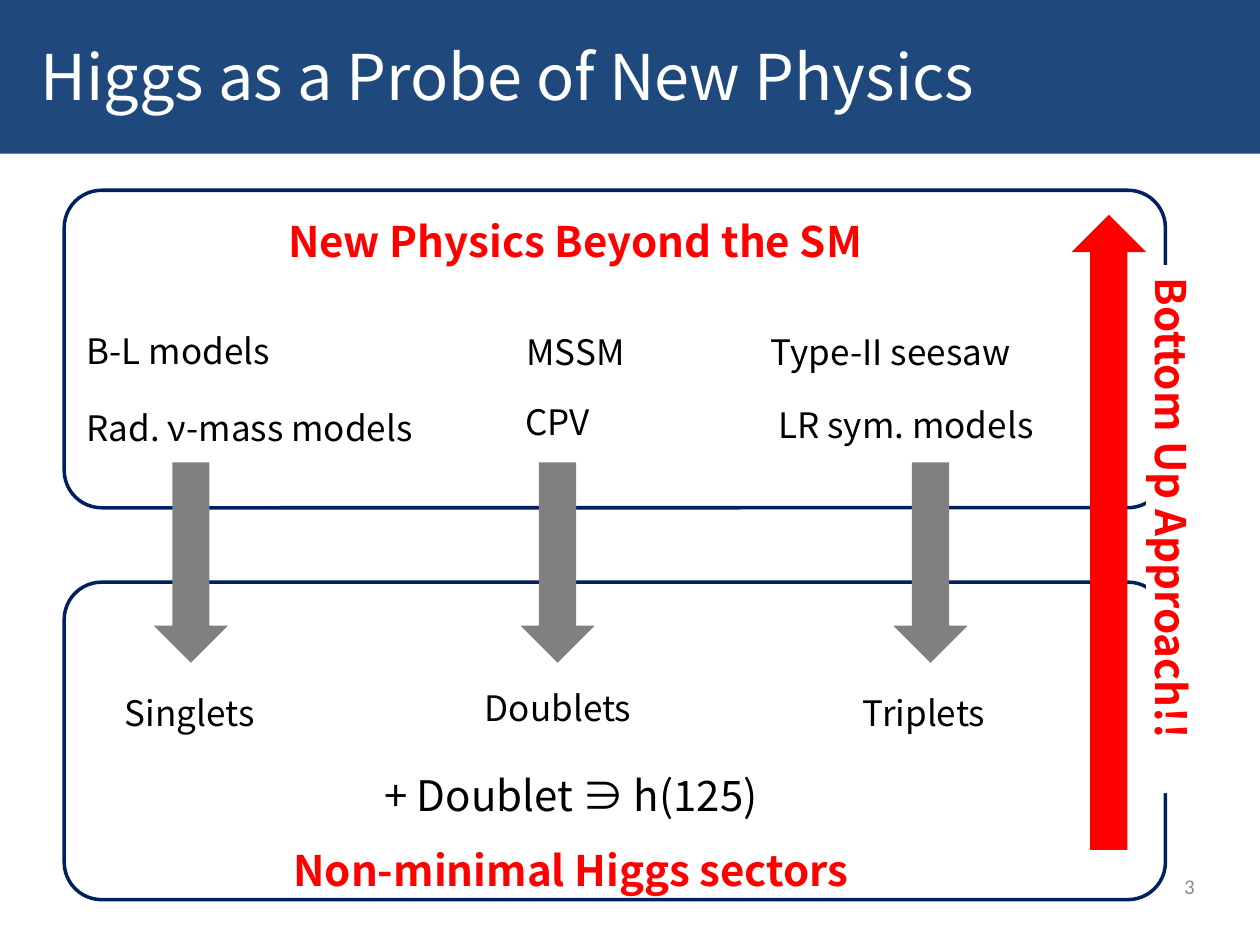
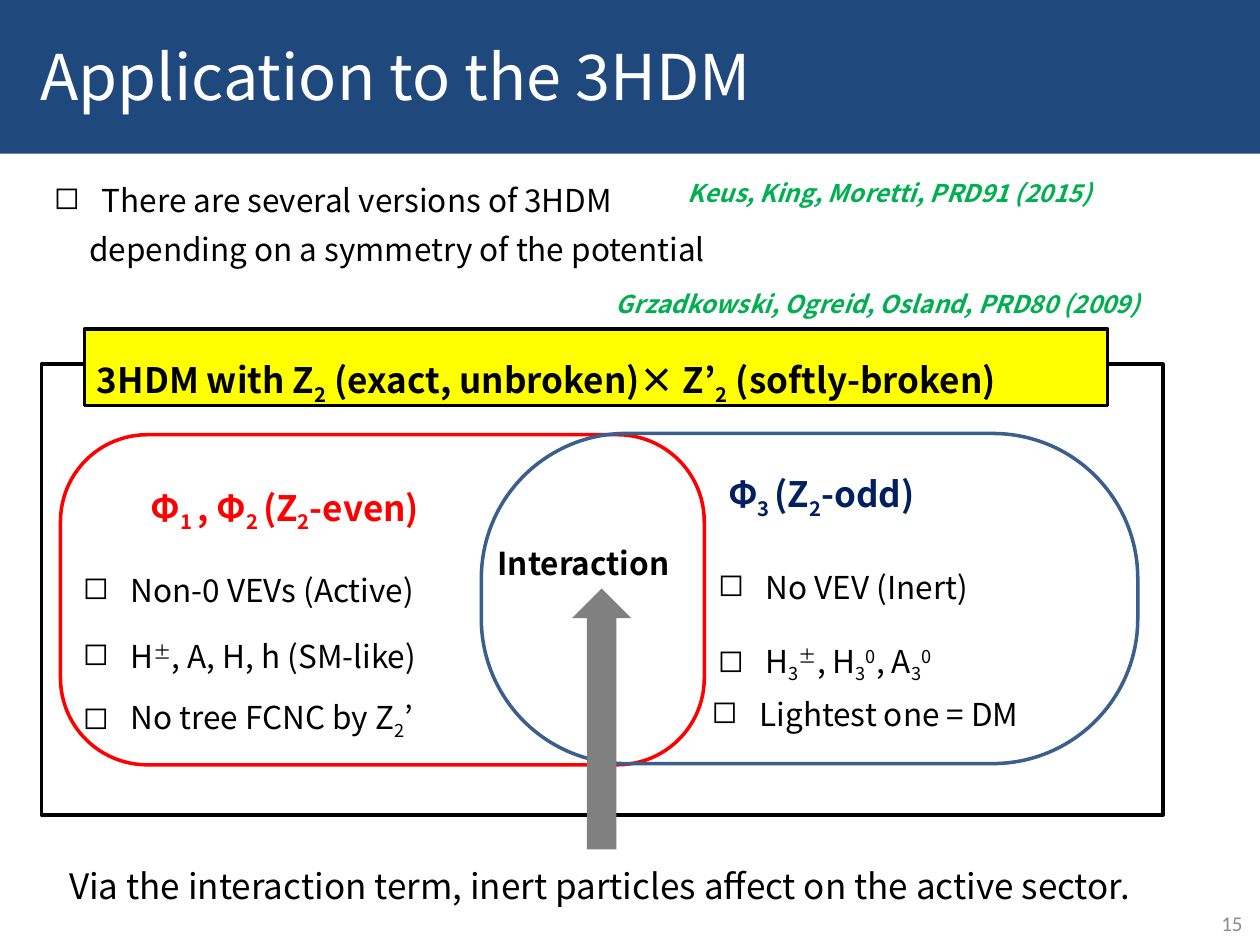
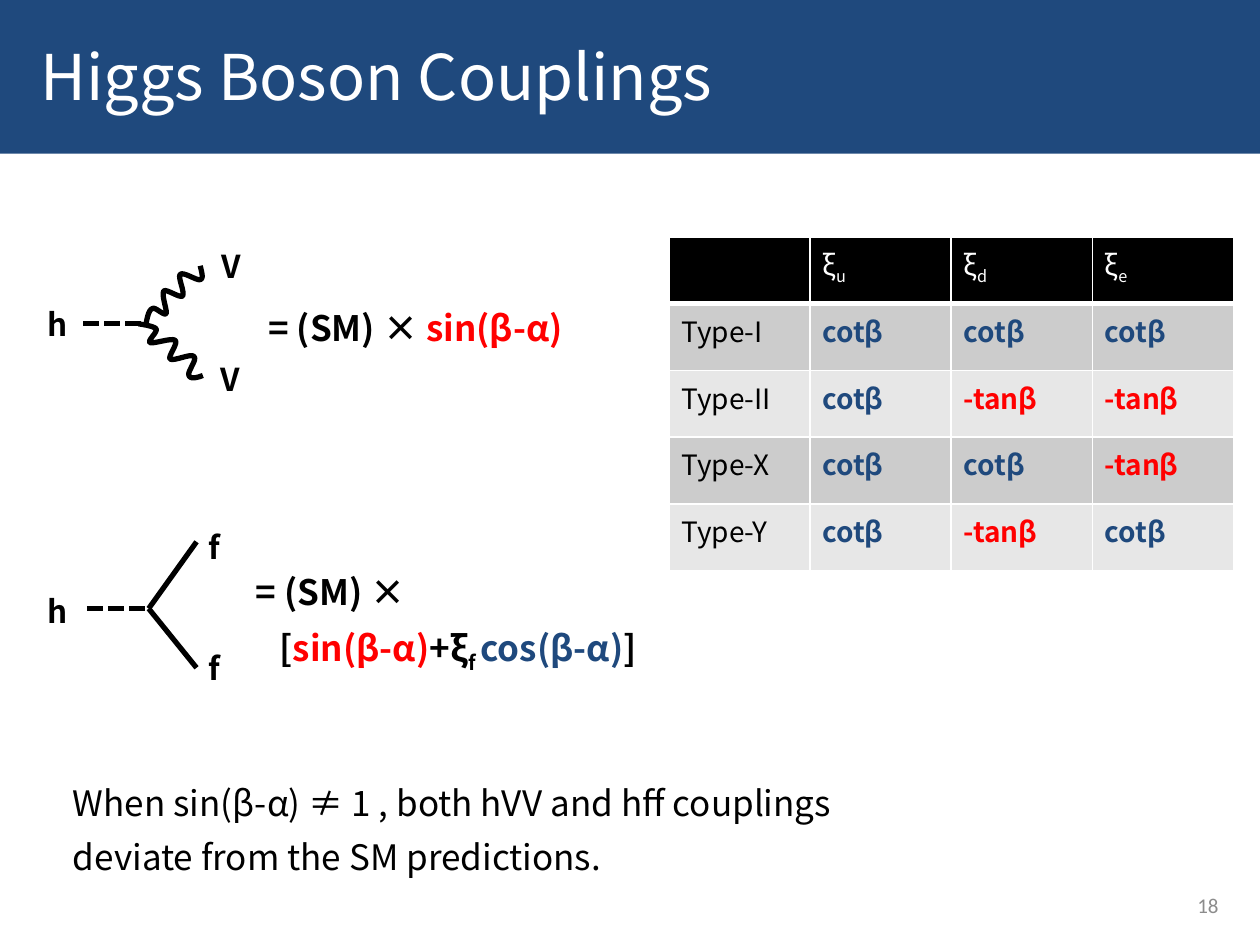
from lxml import etree
from pptx import Presentation
from pptx import util as u
from pptx.dml.color import RGBColor
from pptx.enum import dml, shapes, text
from pptx.oxml.ns import qn

FONT = "Noto Sans CJK JP"
BLACK, WHITE, RED, GREEN = "000000", "FFFFFF", "FF0000", "00B050"
BLUE, NAVY, STEEL, GRAY, YELLOW = "1F497D", "002060", "3A5F8C", "808080", "FFFF00"
SHAPE = shapes.MSO_SHAPE


def rgb(value):
    return RGBColor.from_string(value)


def sub(content):
    return content, {"baseline": -25}


def sup(content):
    return content, {"baseline": 30}


def colored(content, color):
    return content, {"color": color}


class Deck:
    def __init__(self):
        self.presentation = Presentation()
        self.presentation.slide_width = u.Inches(10)
        self.presentation.slide_height = u.Inches(7.5)
        self.slide = None

    def new_slide(self, title, number, number_left, number_top):
        """Start a slide with its title band and page number."""
        self.slide = self.presentation.slides.add_slide(self.presentation.slide_layouts[6])
        band = self.shape(SHAPE.RECTANGLE, 0, -0.03, 10, 1.25, fill=BLUE)
        self.set_text(band, [title], size=36, color=WHITE, anchor="MIDDLE")
        band.text_frame.margin_left = u.Inches(0.32)
        box = self.slide.shapes.add_textbox(
            *map(u.Inches, (number_left, number_top, 2.33, 0.4)))
        self.set_text(box, [number], size=12, color="8C8C8C", font="Calibri",
                      anchor="MIDDLE", align="RIGHT")

    # Text
    def add_run(self, paragraph, content, size, color, bold=False, italic=False,
                font=FONT, baseline=0):
        run = paragraph.add_run()
        run.text = content
        run.font.size = u.Pt(size)
        run.font.bold, run.font.italic = bold, italic
        run.font.color.rgb = rgb(color)
        run.font.name = font
        properties = run._r.get_or_add_rPr()
        etree.SubElement(properties, qn("a:ea"), typeface=font)
        if baseline:
            properties.set("baseline", str(baseline * 1000))

    def add_runs(self, paragraph, runs, **style):
        for run in runs:
            content, changes = run if isinstance(run, tuple) else (run, {})
            self.add_run(paragraph, content, **{**style, **changes})

    def set_text(self, shape, *lines, spacing=1, anchor="TOP", align="LEFT",
                 bullet=False, indent=0, wrap=True, grow=False, **style):
        """Fill a shape with lines of runs; indent applies after the first line."""
        frame = shape.text_frame
        frame.word_wrap = wrap
        frame.vertical_anchor = text.MSO_ANCHOR[anchor]
        if grow:
            frame.auto_size = text.MSO_AUTO_SIZE.SHAPE_TO_FIT_TEXT
        for index, runs in enumerate(lines):
            paragraph = frame.add_paragraph() if index else frame.paragraphs[0]
            paragraph.alignment = text.PP_ALIGN[align]
            paragraph.line_spacing = spacing
            properties = paragraph._p.get_or_add_pPr()
            if bullet and index == 0:
                properties.set("marL", str(u.Inches(0.38)))
                properties.set("indent", str(u.Inches(-0.38)))
                etree.SubElement(properties, qn("a:buChar"), char="◻")
            elif index and indent:
                properties.set("marL", str(u.Inches(indent)))
            self.add_runs(paragraph, runs, **style)

    def label(self, left, top, width, height, *lines, size=20, color=BLACK,
              spacing=1.5, wrap=False, **options):
        box = self.slide.shapes.add_textbox(*map(u.Inches, (left, top, width, height)))
        self.set_text(box, *lines, size=size, color=color, spacing=spacing, wrap=wrap,
                      grow=True, **options)

    def item(self, left, top, width, *lines, height=0.49, **options):
        self.label(left, top, width, height, *lines, size=18, spacing=1.3,
                   wrap=True, bullet=True, **options)

    # Shapes and lines
    def shape(self, kind, left, top, width, height, fill=None, line=None,
              rotation=0, corner=None):
        shape = self.slide.shapes.add_shape(kind, *map(u.Inches, (left, top, width, height)))
        self.paint(shape, fill, line, 2)
        shape.rotation = rotation
        if corner is not None:
            shape.adjustments[0] = corner
        return shape

    def paint(self, shape, fill, line, width):
        shape.shadow.inherit = False
        if fill:
            shape.fill.solid()
            shape.fill.fore_color.rgb = rgb(fill)
        else:
            shape.fill.background()
        if line:
            shape.line.color.rgb = rgb(line)
            shape.line.width = u.Pt(width)
        else:
            shape.line.fill.background()

    def line(self, start, end, dashed=False):
        connector = self.slide.shapes.add_connector(
            shapes.MSO_CONNECTOR.STRAIGHT, *map(u.Inches, (*start, *end)))
        connector.line.color.rgb = rgb(BLACK)
        connector.line.width = u.Pt(3)
        if dashed:
            connector.line.dash_style = dml.MSO_LINE.SQUARE_DOT
        etree.SubElement(connector._element.spPr, qn("a:effectLst"))

    def curve(self, start, segments, steps=8):
        """Trace cubic segments, each given as two controls and an end point."""
        points, origin = [], start
        for x1, y1, x2, y2, x3, y3 in segments:
            for step in range(1, steps + 1):
                t = step / steps
                weights = (1 - t) ** 3, 3 * t * (1 - t) ** 2, 3 * t * t * (1 - t), t ** 3
                points.append(tuple(
                    u.Inches(sum(w * c for w, c in zip(weights, axis)))
                    for axis in ((origin[0], x1, x2, x3), (origin[1], y1, y2, y3))))
            origin = x3, y3
        builder = self.slide.shapes.build_freeform(*map(u.Inches, start))
        builder.add_line_segments(points, close=False)
        self.paint(builder.convert_to_shape(), None, BLACK, 3)

    # Table
    def cell(self, cell, runs, fill, bottom=1, **style):
        properties = cell._tc.get_or_add_tcPr()
        for side, width in (("L", 1), ("R", 1), ("T", 1), ("B", bottom)):
            border = etree.SubElement(properties, qn(f"a:ln{side}"), w=str(u.Pt(width)))
            solid = etree.SubElement(border, qn("a:solidFill"))
            etree.SubElement(solid, qn("a:srgbClr"), val=WHITE)
        cell.fill.solid()
        cell.fill.fore_color.rgb = rgb(fill)
        self.add_runs(cell.text_frame.paragraphs[0], runs, size=16, **style)


def new_physics_slide(deck):
    deck.new_slide("Higgs as a Probe of New Physics", "3", 7.25, 6.83)
    for top in (1.51, 4.62):
        deck.shape(SHAPE.ROUNDED_RECTANGLE, 0.51, top, 8.74, 2.52, line=NAVY, corner=0.118)
    for left in (0.72, 3.63, 6.59):
        deck.shape(SHAPE.RIGHT_ARROW, left, 4.17, 1.59, 0.59, fill=GRAY, rotation=90)

    # Models above, multiplets below
    for left, top, width, height, name in (
            (0.59, 2.4, 1.74, 0.61, "B-L models"),
            (0.59, 3.01, 2.99, 0.56, "Rad. ν-mass models"),
            (4.08, 2.41, 1.02, 0.56, "MSSM"),
            (4.07, 2.96, 0.75, 0.56, "CPV"),
            (6.02, 2.41, 2.29, 0.56, "Type-II seesaw"),
            (6.08, 2.99, 2.39, 0.56, "LR sym. models"),
            (0.89, 5.27, 1.28, 0.61, "Singlets"),
            (3.75, 5.23, 1.4, 0.61, "Doublets"),
            (6.75, 5.27, 1.19, 0.61, "Triplets")):
        deck.label(left, top, width, height, [name])
    heading = dict(size=24, color=RED, bold=True)
    deck.label(2.19, 1.46, 5.2, 0.66, ["New Physics Beyond the SM"], **heading)
    deck.label(2.23, 6.45, 5.04, 0.71, ["Non-minimal Higgs sectors"], **heading)
    deck.label(2.95, 5.86, 3.49, 0.71, ["+ Doublet ∋ h(125)"], size=24)

    # Bottom-up arrow
    deck.shape(SHAPE.RIGHT_ARROW, 6.28, 3.93, 5.04, 0.59, fill=RED, rotation=270)
    banner = deck.shape(SHAPE.RECTANGLE, 7.33, 3.87, 4.19, 0.66, fill=WHITE, rotation=90)
    deck.set_text(banner, ["Bottom Up Approach!!"], spacing=1.5, wrap=False, grow=True,
                  **heading)


def application_slide(deck):
    deck.new_slide("Application to the 3HDM", "15", 7.63, 7.13)
    deck.item(0.33, 1.3, 10.08, ["There are several versions of 3HDM"],
              ["depending on a symmetry of the potential"], height=0.89, indent=0.28)

    # Even and odd sectors
    deck.shape(SHAPE.ROUNDED_RECTANGLE, 0.48, 3.45, 5.11, 2.62, line=RED, corner=0.263)
    deck.shape(SHAPE.ROUNDED_RECTANGLE, 3.82, 3.44, 5.21, 2.62, line=STEEL, corner=0.439)
    deck.label(1.1, 3.62, 2.84, 0.56,
               ["Φ", sub("1 "), ", Φ", sub("2 "), "(Z", sub("2"), "-even)"],
               color=RED, bold=True)
    deck.label(5.68, 3.51, 1.92, 0.56, ["Φ", sub("3 "), "(Z", sub("2"), "-odd)"],
               color=NAVY, bold=True)
    for left, top, width, runs in (
            (0.56, 4.39, 3.25, ["Non-0 VEVs (Active)"]),
            (0.56, 4.92, 3.39, ["H", sup("±"), ", A, H, h (SM-like)"]),
            (0.56, 5.39, 3.39, ["No tree FCNC by Z", sub("2"), "’"]),
            (5.6, 4.37, 2.52, ["No VEV (Inert)"]),
            (5.6, 4.94, 2.73, ["H", sub("3"), sup("±"), ", H", sub("3"), sup("0"),
                               ", A", sub("3"), sup("0")]),
            (5.55, 5.38, 3.03, ["Lightest one = DM"])):
        deck.item(left, top, width, runs)

    # Frame with its heading, and the interaction arrow
    deck.shape(SHAPE.RECTANGLE, 0.33, 2.89, 8.9, 3.58, line=BLACK)
    heading = deck.shape(SHAPE.RECTANGLE, 0.67, 2.61, 8.12, 0.61, fill=YELLOW, line=BLACK)
    deck.set_text(heading, ["3HDM with Z", sub("2"), " (exact, unbroken)× Z’", sub("2"),
                            " (softly-broken)"],
                  size=20, color=BLACK, bold=True, spacing=1.5, wrap=False, grow=True)
    deck.shape(SHAPE.DOWN_ARROW, 4.54, 4.67, 0.47, 2.07, fill=GRAY, rotation=180)
    deck.label(3.85, 4.18, 1.79, 0.49, ["Interaction"], size=18, spacing=1.3,
               wrap=True, bold=True)

    # References and conclusion
    for left, top, width, reference in (
            (5.36, 1.25, 3.87, "Keus, King, Moretti, PRD91 (2015)"),
            (4.79, 2.13, 4.97, "Grzadkowski, Ogreid, Osland, PRD80 (2009)")):
        deck.label(left, top, width, 0.45, [reference], size=14, color=GREEN,
                   wrap=True, bold=True, italic=True)
    deck.label(0.45, 6.71, 9.11, 0.54,
               ["Via the interaction term, inert particles affect on the active sector."],
               spacing=1.3, wrap=True)


def couplings_slide(deck):
    deck.new_slide("Higgs Boson Couplings", "18", 7.44, 6.98)

    # Coupling factors by type
    table = deck.slide.shapes.add_table(
        5, 4, *map(u.Inches, (5.31, 1.88, 4.49, 2.66))).table
    for column in table.columns:
        column.width = u.Inches(1.12)
    for row in table.rows:
        row.height = u.Inches(0.53)
    for column, fermion in enumerate(("", "u", "d", "e")):
        deck.cell(table.cell(0, column), ["ξ", sub(fermion)] if fermion else [],
                  BLACK, bottom=3, color=WHITE)
    cot, tan = "cotβ", "-tanβ"
    factors = {"Type-I": (cot, cot, cot), "Type-II": (cot, tan, tan),
               "Type-X": (cot, cot, tan), "Type-Y": (cot, tan, cot)}
    for row, (name, values) in enumerate(factors.items(), 1):
        fill = "CCCCCC" if row % 2 else "E7E7E7"
        deck.cell(table.cell(row, 0), [name], fill, color=BLACK)
        for column, value in enumerate(values, 1):
            deck.cell(table.cell(row, column), [value], fill, bold=True,
                      color=BLUE if value == cot else RED)

    # Vertex with two vector bosons
    deck.line((0.66, 2.57), (1.16, 2.57), dashed=True)
    deck.curve((1.16, 2.57), [
        (1.17, 2.52, 1.18, 2.46, 1.21, 2.45), (1.23, 2.43, 1.3, 2.51, 1.32, 2.49),
        (1.33, 2.47, 1.28, 2.34, 1.3, 2.31), (1.32, 2.29, 1.43, 2.37, 1.45, 2.35),
        (1.47, 2.32, 1.41, 2.2, 1.43, 2.18), (1.45, 2.15, 1.56, 2.23, 1.59, 2.22),
        (1.62, 2.21, 1.6, 2.16, 1.59, 2.11)])
    deck.curve((1.1, 2.57), [
        (1.16, 2.58, 1.22, 2.59, 1.24, 2.61), (1.25, 2.64, 1.17, 2.7, 1.19, 2.72),
        (1.22, 2.73, 1.36, 2.68, 1.39, 2.7), (1.42, 2.72, 1.33, 2.83, 1.35, 2.85),
        (1.38, 2.87, 1.52, 2.8, 1.54, 2.83), (1.57, 2.85, 1.48, 2.96, 1.5, 2.98),
        (1.51, 3.01, 1.56, 3, 1.61, 2.98)])
    deck.label(2.03, 2.38, 2.88, 0.44, ["= (SM) × ", colored("sin(β-α)", RED)],
               spacing=1, bold=True)

    # Vertex with two fermions
    deck.line((0.69, 4.83), (1.17, 4.83), dashed=True)
    for end_y in (4.3, 5.3):
        deck.line((1.18, 4.83), (1.56, end_y))
    deck.label(1.93, 4.38, 3.8, 0.98, ["= (SM) ×"],
               ["[", colored("sin(β-α)", RED), "+ξ", sub("f "),
                colored("cos(β-α)", BLUE), "]"],
               spacing=1.3, bold=True, indent=0.19)

    # Particle names
    for left, top, width, particle in (
            (0.28, 2.37, 0.37, "h"), (1.66, 1.91, 0.39, "V"), (1.65, 2.81, 0.39, "V"),
            (0.28, 4.65, 0.37, "h"), (1.56, 4.14, 0.3, "f"), (1.56, 5.1, 0.3, "f")):
        deck.label(left, top, width, 0.4, [particle], size=18, spacing=1, bold=True)

    deck.label(0.48, 6.05, 9.11, 0.98,
               ["When sin(β-α) ≠ 1 , both hVV and hff couplings"],
               ["deviate from the SM predictions."], spacing=1.3, wrap=True)


def main():
    deck = Deck()
    new_physics_slide(deck)
    application_slide(deck)
    couplings_slide(deck)
    deck.presentation.save("out.pptx")


if __name__ == "__main__":
    main()
